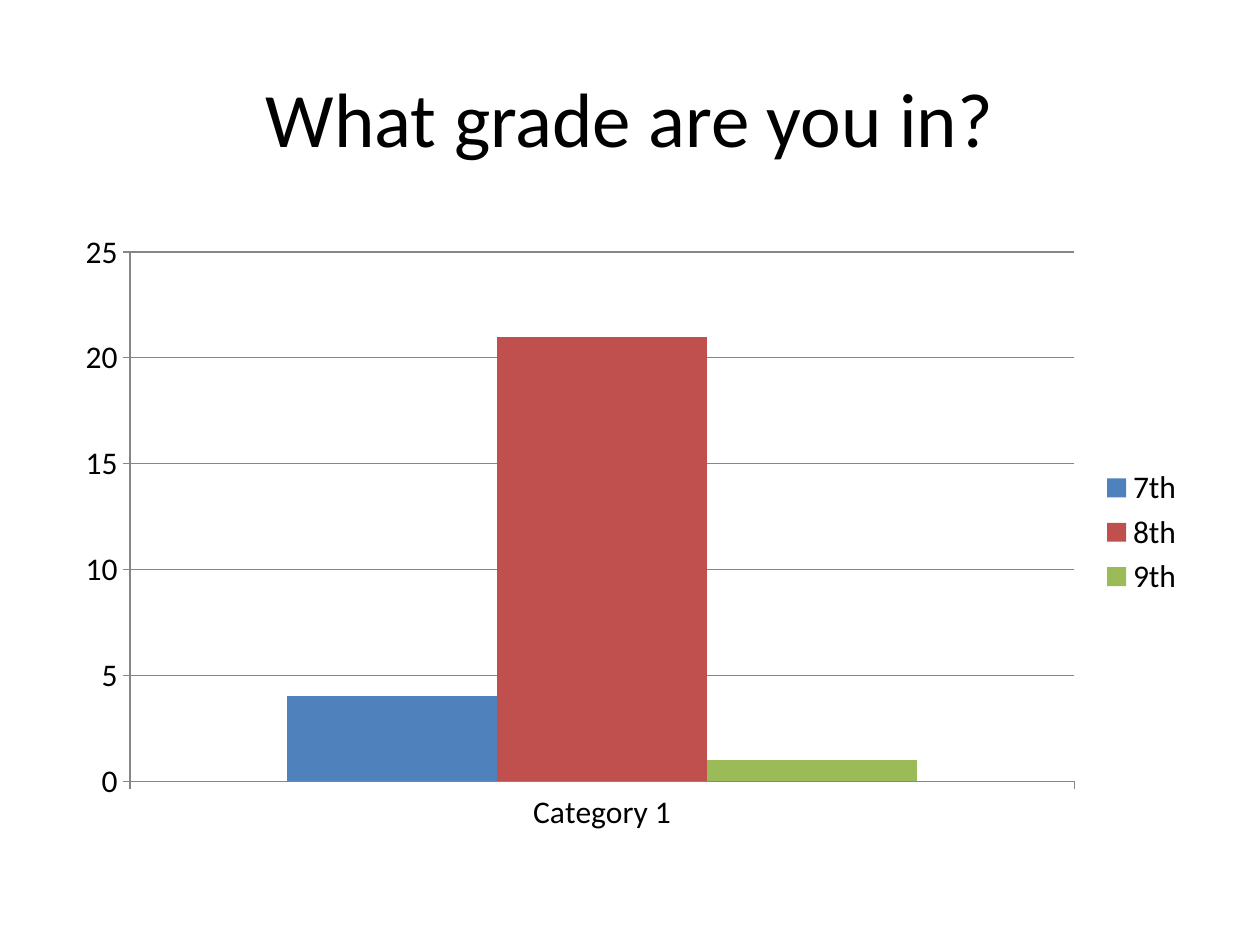
from pptx import Presentation
from pptx.chart.data import CategoryChartData
from pptx.dml.color import RGBColor
from pptx.enum.chart import XL_CHART_TYPE, XL_LEGEND_POSITION, XL_TICK_MARK
from pptx.enum.text import MSO_ANCHOR, PP_ALIGN
from pptx.util import Inches, Pt

FONT = "Calibri"
COLORS = {
    "text": "000000",
    "line": "868686",
    "7th": "4F81BD",
    "8th": "C0504D",
    "9th": "9BBB59",
}
GRADES = {"7th": 4, "8th": 21, "9th": 1}


def color(name):
    return RGBColor.from_string(COLORS[name])


def share_box(prs, left, top, width, height):
    w, h = prs.slide_width, prs.slide_height
    return int(left * w), int(top * h), int(width * w), int(height * h)


def format_font(font, size):
    font.name = FONT
    font.size = Pt(size)
    font.color.rgb = color("text")


def set_title(s, text, box):
    sp = s.shapes.title
    sp.left, sp.top, sp.width, sp.height = box
    tf = sp.text_frame
    tf.text = text
    tf.vertical_anchor = MSO_ANCHOR.MIDDLE
    p = tf.paragraphs[0]
    p.alignment = PP_ALIGN.CENTER
    format_font(p.runs[0].font, 44)


def format_line(line):
    line.color.rgb = color("line")
    line.width = Pt(0.75)


def format_axis(axis):
    axis.major_tick_mark = XL_TICK_MARK.OUTSIDE
    axis.minor_tick_mark = XL_TICK_MARK.NONE
    format_line(axis.format.line)


def add_grade_chart(s, box):
    data = CategoryChartData()
    data.categories = ["Category 1"]
    for grade, count in GRADES.items():
        data.add_series(grade, [count])
    chart = s.shapes.add_chart(XL_CHART_TYPE.COLUMN_CLUSTERED, *box, data).chart
    format_font(chart.font, 18)
    chart.has_title = False
    chart.has_legend = True
    chart.legend.position = XL_LEGEND_POSITION.RIGHT
    chart.legend.include_in_layout = False

    for axis in (chart.category_axis, chart.value_axis):
        format_axis(axis)
    chart.value_axis.has_major_gridlines = True
    format_line(chart.value_axis.major_gridlines.format.line)

    plot = chart.plots[0]
    plot.gap_width = 150
    plot.vary_by_categories = False
    for series in plot.series:
        series.format.fill.solid()
        series.format.fill.fore_color.rgb = color(series.name)


def main():
    prs = Presentation()
    prs.slide_width, prs.slide_height = Inches(10), Inches(7.5)
    s = prs.slides.add_slide(prs.slide_layouts[5])
    set_title(s, "What grade are you in?", share_box(prs, 0.05, 0.04, 0.9, 1 / 6))
    add_grade_chart(s, share_box(prs, 0.05, 7 / 30, 0.9, 0.66))
    prs.save("out.pptx")


if __name__ == "__main__":
    main()
